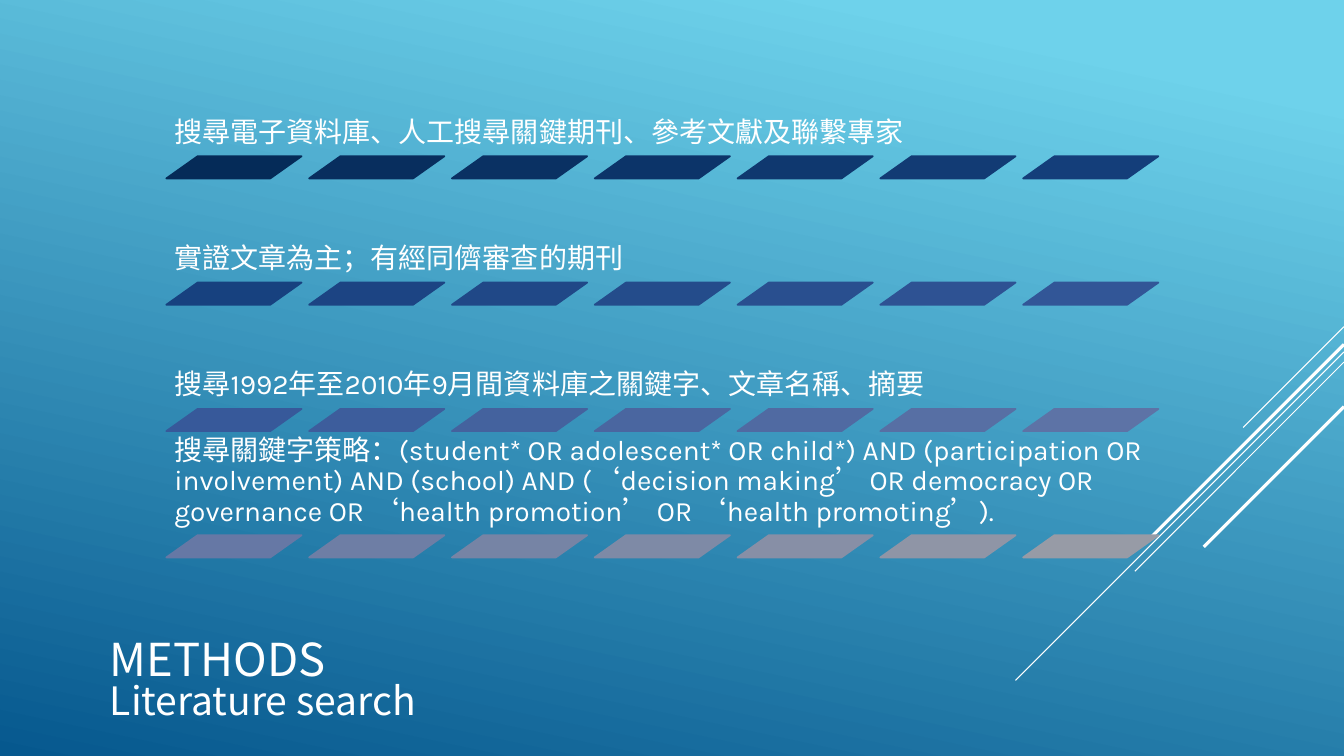
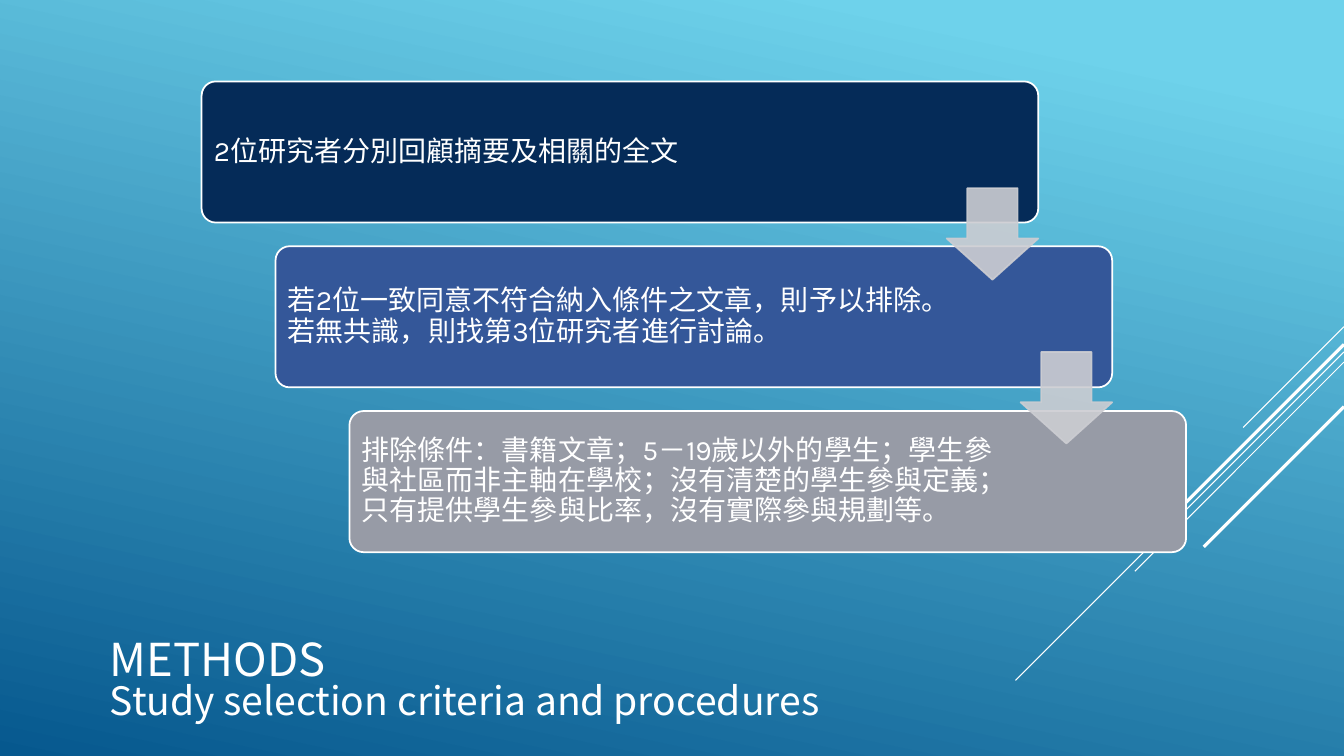
from lxml.etree import SubElement
from pptx import Presentation
from pptx.dml.color import RGBColor as RGB
from pptx.enum.shapes import MSO_CONNECTOR as Connector, MSO_SHAPE as Preset
from pptx.enum.text import MSO_ANCHOR as Anchor, PP_ALIGN as Align
from pptx.oxml.ns import qn
from pptx.util import Inches, Pt

# Grid: 160 columns by 90 rows
COLUMNS, ROWS = 160, 90
SLIDE_WIDTH, SLIDE_HEIGHT = Inches(13.33), Inches(7.5)

# Colours and fonts
WHITE = RGB(0xFF, 0xFF, 0xFF)
SKY = RGB(0x6E, 0xD2, 0xEB)
DEEP_BLUE = RGB(0x06, 0x58, 0x8E)
NAVY = RGB(0x05, 0x2B, 0x58)
ROYAL = RGB(0x34, 0x57, 0x99)
GREY = RGB(0x97, 0x9B, 0xA6)
PALE_GREY = RGB(0xCC, 0xCD, 0xD2)
TITLE_FONT = "Noto Sans CJK TC"
BODY_FONT = "Karla"

# Diagonal strokes from the right edge: start row, length, weight
STROKES = [(38.9, 12, 0.75), (41.9, 39.1, 0.75), (43.1, 24.9, 0.75),
           (41, 22.9, 2.25), (48.4, 16.7, 2.25)]

# Search steps, each with the first and last colour of its strip
SEARCH_STEPS = [
    ("搜尋電子資料庫、人工搜尋關鍵期刊、參考文獻及聯繫專家",
     NAVY, RGB(0x14, 0x3E, 0x7A)),
    ("實證文章為主；有經同儕審查的期刊",
     RGB(0x17, 0x41, 0x7F), RGB(0x32, 0x56, 0x97)),
    ("搜尋1992年至2010年9月間資料庫之關鍵字、文章名稱、摘要",
     RGB(0x37, 0x59, 0x9A), RGB(0x5D, 0x73, 0xA6)),
    ("搜尋關鍵字策略：(student* OR adolescent* OR child*) AND "
     "(participation OR involvement) AND (school) AND "
     "(‘decision making’ OR democracy OR governance OR "
     "‘health promotion’ OR ‘health promoting’).",
     RGB(0x66, 0x78, 0xA5), GREY),
]

# Selection steps: wording, colour, width of the text
SELECTION_STEPS = [
    ("2位研究者分別回顧摘要及相關的全文", NAVY, 81.5),
    ("若2位一致同意不符合納入條件之文章，則予以排除。"
     "若無共識，則找第3位研究者進行討論。", ROYAL, 78.8),
    ("排除條件：書籍文章；5－19歲以外的學生；學生參與社區而非主軸在學校；"
     "沒有清楚的學生參與定義；只有提供學生參與比率，沒有實際參與規劃等。",
     GREY, 78.8),
]


def col(count):
    return int(SLIDE_WIDTH * count / COLUMNS)


def row(count):
    return int(SLIDE_HEIGHT * count / ROWS)


def blend(first, last, share):
    return RGB(*(round(a + (b - a) * share) for a, b in zip(first, last)))


class Deck:
    """Holds the shared style and the current slide."""

    def __init__(self):
        self.presentation = Presentation()
        self.presentation.slide_width = SLIDE_WIDTH
        self.presentation.slide_height = SLIDE_HEIGHT
        self.slide = None

    def new_slide(self, subtitle):
        blank = self.presentation.slide_layouts[6]
        self.slide = self.presentation.slides.add_slide(blank)
        self.background()
        for start, length, weight in STROKES:
            self.stroke(start, length, weight)
        self.title(subtitle)

    def background(self):
        fill = self.slide.background.fill
        fill.gradient()
        fill.gradient_angle = 258
        stops = [(0.1, SKY), (1, DEEP_BLUE)]
        for stop, (position, color) in zip(fill.gradient_stops, stops):
            stop.position = position
            stop.color.rgb = color

    def stroke(self, start, length, weight):
        line = self.slide.shapes.add_connector(
            Connector.STRAIGHT, col(COLUMNS), row(start),
            col(COLUMNS - length), row(start + length))
        line.line.color.rgb = WHITE
        line.line.width = Pt(weight)
        SubElement(line._element.spPr, qn("a:effectLst"))

    def title(self, subtitle):
        heading = self.text(f"METHODS\v{subtitle}", 11.9, 77.4, 136.1, 7.6,
                            Anchor.MIDDLE, font=TITLE_FONT, inset=(0.1, 0.05))
        heading.line_spacing = 0.8
        heading.space_after = Pt(0)
        for run, size in zip(heading.runs, (32.4, 27.9)):
            run.font.size = Pt(size)

    def text(self, wording, left, top, width, height, anchor,
             font=BODY_FONT, inset=(0.08, 0.08)):
        box = self.slide.shapes.add_textbox(
            col(left), row(top), col(width), row(height))
        frame = box.text_frame
        frame.word_wrap = True
        frame.vertical_anchor = anchor
        frame.margin_left = frame.margin_right = Inches(inset[0])
        frame.margin_top = frame.margin_bottom = Inches(inset[1])
        paragraph = frame.paragraphs[0]
        paragraph.text = wording
        paragraph.alignment = Align.LEFT
        paragraph.line_spacing = 0.9
        paragraph.space_after = Pt(7)
        for run in paragraph.runs:
            run.font.name = font
            run.font.size = Pt(20)
            run.font.color.rgb = WHITE
            east_asian = SubElement(run.font._element, qn("a:ea"))
            east_asian.set("typeface", TITLE_FONT)
        return paragraph

    def shape(self, preset, left, top, width, height, adjustments,
              fill, outline, opacity=100):
        figure = self.slide.shapes.add_shape(
            preset, col(left), row(top), col(width), row(height))
        for index, value in enumerate(adjustments):
            figure.adjustments[index] = value
        figure.shadow.inherit = False
        figure.fill.solid()
        figure.fill.fore_color.rgb = fill
        figure.line.color.rgb = outline
        figure.line.width = Pt(1.25)
        if opacity < 100:
            for color in list(figure._element.spPr.iter(qn("a:srgbClr"))):
                SubElement(color, qn("a:alpha")).set("val", str(opacity * 1000))

    def strip(self, left, top, first, last, count=7):
        for index in range(count):
            color = blend(first, last, index / (count - 1))
            self.shape(Preset.PARALLELOGRAM, left + 17 * index, top, 16.1, 2.64,
                       [1.41], color, color)

    def step_box(self, wording, left, top, color, text_width):
        self.shape(Preset.ROUNDED_RECTANGLE, left, top, 99.6, 16.8,
                   [0.1], color, WHITE)
        self.text(wording, left + 0.5, top + 0.5, text_width, 15.8, Anchor.MIDDLE)

    def arrow(self, left, top):
        self.shape(Preset.DOWN_ARROW, left, top, 10.9, 10.9, [0.55, 0.45],
                   PALE_GREY, PALE_GREY, opacity=90)


def main():
    deck = Deck()

    # Literature search: text above a strip, four times
    deck.new_slide("Literature search")
    for index, (wording, first, last) in enumerate(SEARCH_STEPS):
        top = 7.7 + 15.04 * index
        deck.text(wording, 19.8, top, 120.5, 10.9, Anchor.BOTTOM)
        deck.strip(19.8, top + 10.9, first, last)

    # Study selection: staggered boxes joined by arrows
    deck.new_slide("Study selection criteria and procedures")
    for index, (wording, color, text_width) in enumerate(SELECTION_STEPS):
        deck.step_box(wording, 24 + 8.8 * index, 9.7 + 19.62 * index,
                      color, text_width)
    for index in range(len(SELECTION_STEPS) - 1):
        deck.arrow(112.7 + 8.8 * index, 22.4 + 19.5 * index)

    deck.presentation.save("out.pptx")


if __name__ == "__main__":
    main()
